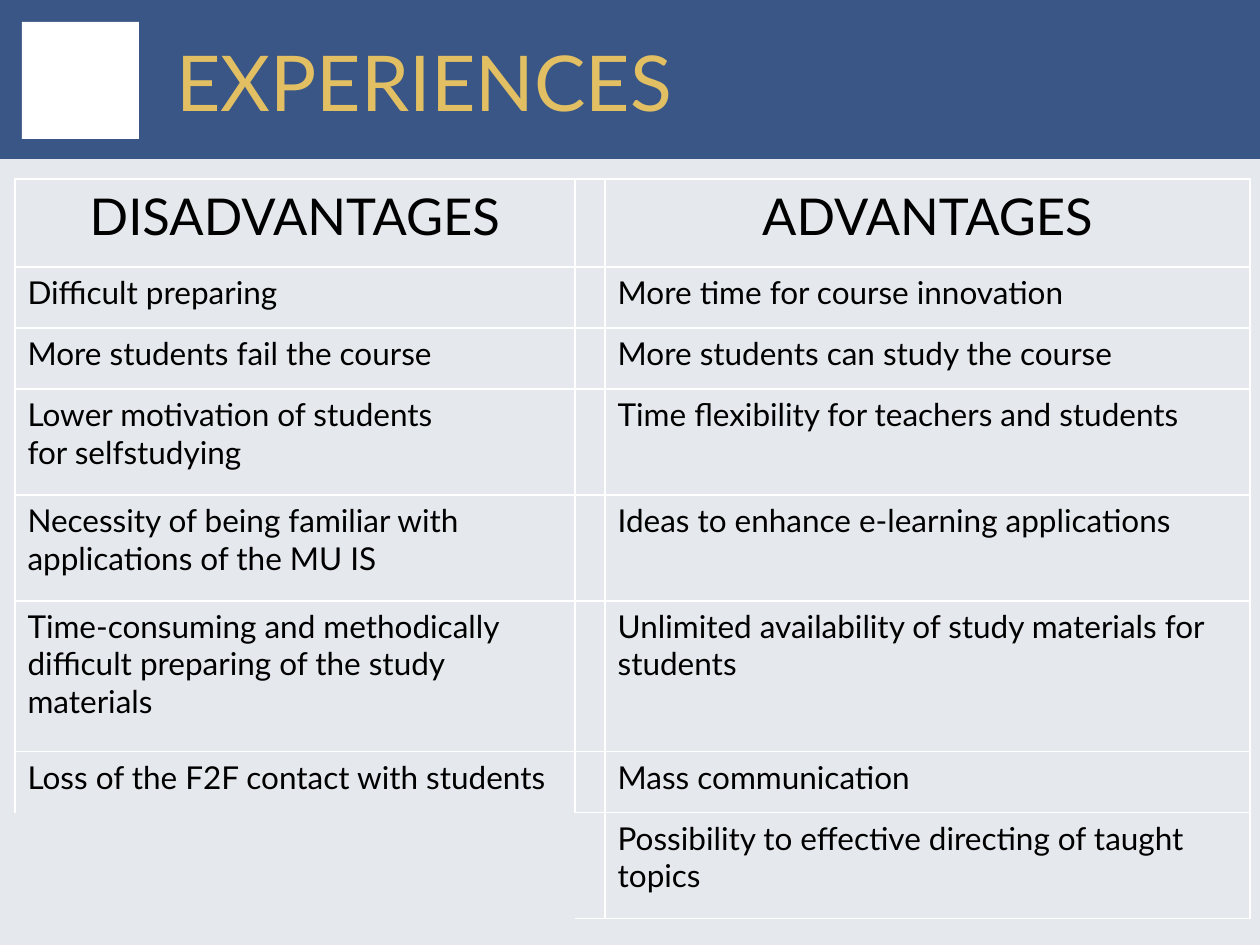
import pptx
import pptx.dml.color
import pptx.enum.shapes
import pptx.enum.text
import pptx.oxml
import pptx.oxml.ns
import pptx.util
from dataclasses import dataclass

PX_PER_INCH = 126
SLIDE_WIDTH, SLIDE_HEIGHT = 1260, 945


@dataclass(frozen=True)
class Theme:
    font: str = "Lato"
    background: str = "E5E8ED"
    band: str = "395686"
    white: str = "FFFFFF"
    title: str = "E1BF62"
    text: str = "000000"
    title_size: int = 44
    heading_size: int = 29
    body_size: int = 18
    border_width: int = 1


THEME = Theme()

COLUMN_WIDTHS = (560, 30, 645)
HEADING_HEIGHT = 88
ROW_HEIGHTS = {1: 61, 2: 106, 3: 151}  # by number of text lines
HEADINGS = ("DISADVANTAGES", "ADVANTAGES")
COMPARISONS = (
    ("Difficult preparing", "More time for course innovation", 1),
    ("More students fail the course", "More students can study the course", 1),
    ("Lower motivation of students\vfor selfstudying",
     "Time flexibility for teachers and students", 2),
    ("Necessity of being familiar with applications of the MU IS",
     "Ideas to enhance e-learning applications", 2),
    ("Time-consuming and methodically difficult preparing of the study materials",
     "Unlimited availability of study materials for students", 3),
    ("Loss of the F2F contact with students", "Mass communication", 1),
    ("", "Possibility to effective directing of taught topics", 2),
)
# Edges drawn on the cells around the open bottom-left corner
OPEN_CORNER_EDGES = {(6, 0): "LRT", (7, 0): "", (7, 1): "RTB"}


def px(length):
    return pptx.util.Emu(round(length * 914400 / PX_PER_INCH))


def rgb(value):
    return pptx.dml.color.RGBColor.from_string(value)


def style_text(paragraph, size, color):
    for run in paragraph.runs:
        run.font.name = THEME.font
        run.font.size = pptx.util.Pt(size)
        run.font.color.rgb = rgb(color)


def add_block(slide, left, top, width, height, color):
    block = slide.shapes.add_shape(
        pptx.enum.shapes.MSO_SHAPE.RECTANGLE, px(left), px(top), px(width), px(height))
    block.shadow.inherit = False
    block.fill.solid()
    block.fill.fore_color.rgb = rgb(color)
    block.line.fill.background()


def set_borders(cell, drawn_edges):
    properties = cell._tc.get_or_add_tcPr()
    namespace = pptx.oxml.ns.nsdecls("a")
    width = pptx.util.Pt(THEME.border_width)
    for position, edge in enumerate("LRTB"):
        if edge in drawn_edges:
            paint = f'<a:solidFill><a:srgbClr val="{THEME.white}"/></a:solidFill>'
        else:
            paint = "<a:noFill/>"
        properties.insert(position, pptx.oxml.parse_xml(
            f'<a:ln{edge} {namespace} w="{width}">{paint}</a:ln{edge}>'))


def add_header(slide, left, top, width, height):
    # Band and emblem square
    add_block(slide, left, top, width, height, THEME.band)
    margin, square = 22, 117
    add_block(slide, left + margin, top + margin, square, square, THEME.white)

    # Title
    title_left = 164
    title = slide.shapes.add_textbox(
        px(left + title_left), px(top + margin), px(1033), px(square))
    frame = title.text_frame
    frame.word_wrap = True
    frame.vertical_anchor = pptx.enum.text.MSO_ANCHOR.MIDDLE
    frame.text = "EXPERIENCES"
    style_text(frame.paragraphs[0], THEME.title_size, THEME.title)


def add_comparison(slide, left, top, width, height):
    rows = [(*HEADINGS, HEADING_HEIGHT)]
    rows += [(minus, plus, ROW_HEIGHTS[lines]) for minus, plus, lines in COMPARISONS]
    table = slide.shapes.add_table(
        len(rows), len(COLUMN_WIDTHS), px(left), px(top), px(width), px(height)).table
    table.first_row = False
    table.horz_banding = False
    for column, column_width in zip(table.columns, COLUMN_WIDTHS):
        column.width = px(column_width)

    # Cells, with an empty gap column between the two sides
    for row, (disadvantage, advantage, row_height) in enumerate(rows):
        table.rows[row].height = px(row_height)
        for column, wording in enumerate((disadvantage, "", advantage)):
            cell = table.cell(row, column)
            cell.fill.background()
            set_borders(cell, OPEN_CORNER_EDGES.get((row, column), "LRTB"))
            if not wording:
                continue
            cell.text_frame.text = wording
            paragraph = cell.text_frame.paragraphs[0]
            if row == 0:
                paragraph.alignment = pptx.enum.text.PP_ALIGN.CENTER
            style_text(paragraph, THEME.body_size if row else THEME.heading_size, THEME.text)


def main():
    presentation = pptx.Presentation()
    presentation.slide_width = px(SLIDE_WIDTH)
    presentation.slide_height = px(SLIDE_HEIGHT)
    slide = presentation.slides.add_slide(presentation.slide_layouts[6])
    slide.background.fill.solid()
    slide.background.fill.fore_color.rgb = rgb(THEME.background)

    add_header(slide, 0, 0, SLIDE_WIDTH, 159)
    add_comparison(slide, 15, 179, sum(COLUMN_WIDTHS), 740)
    presentation.save("out.pptx")


if __name__ == "__main__":
    main()
